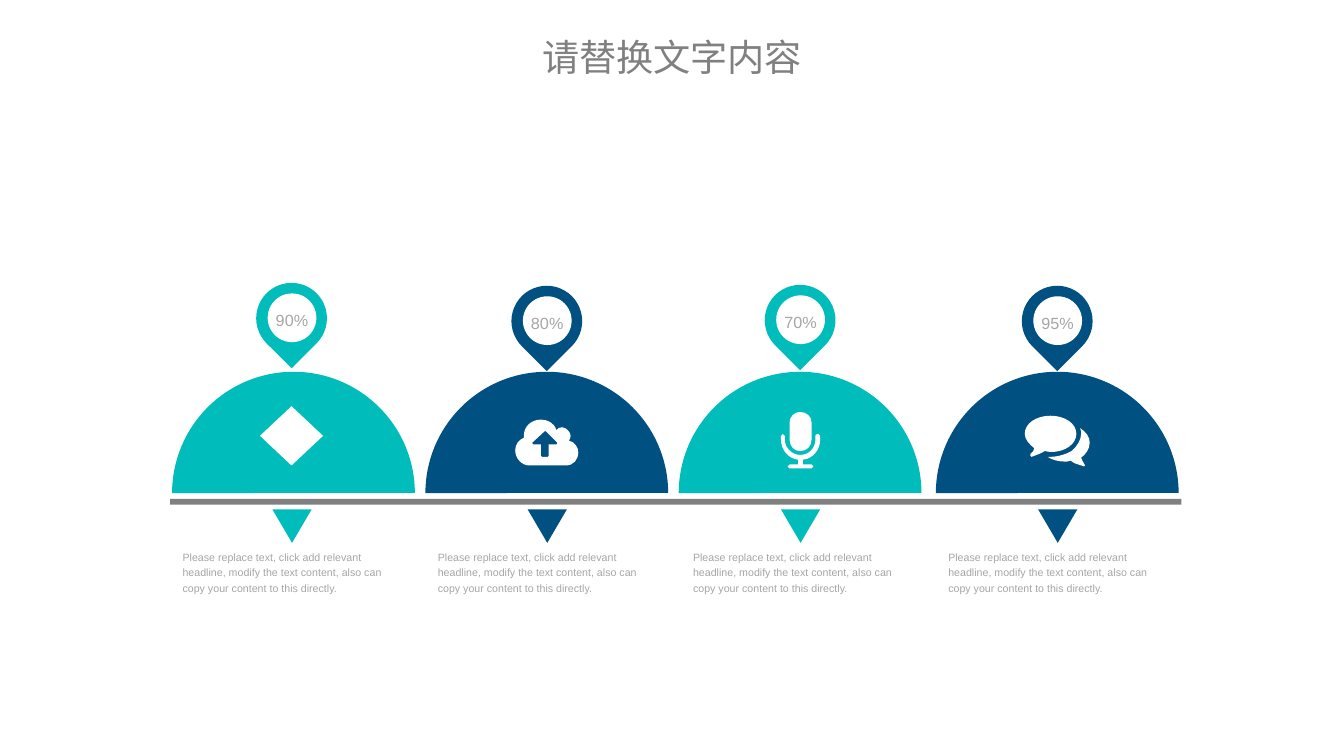
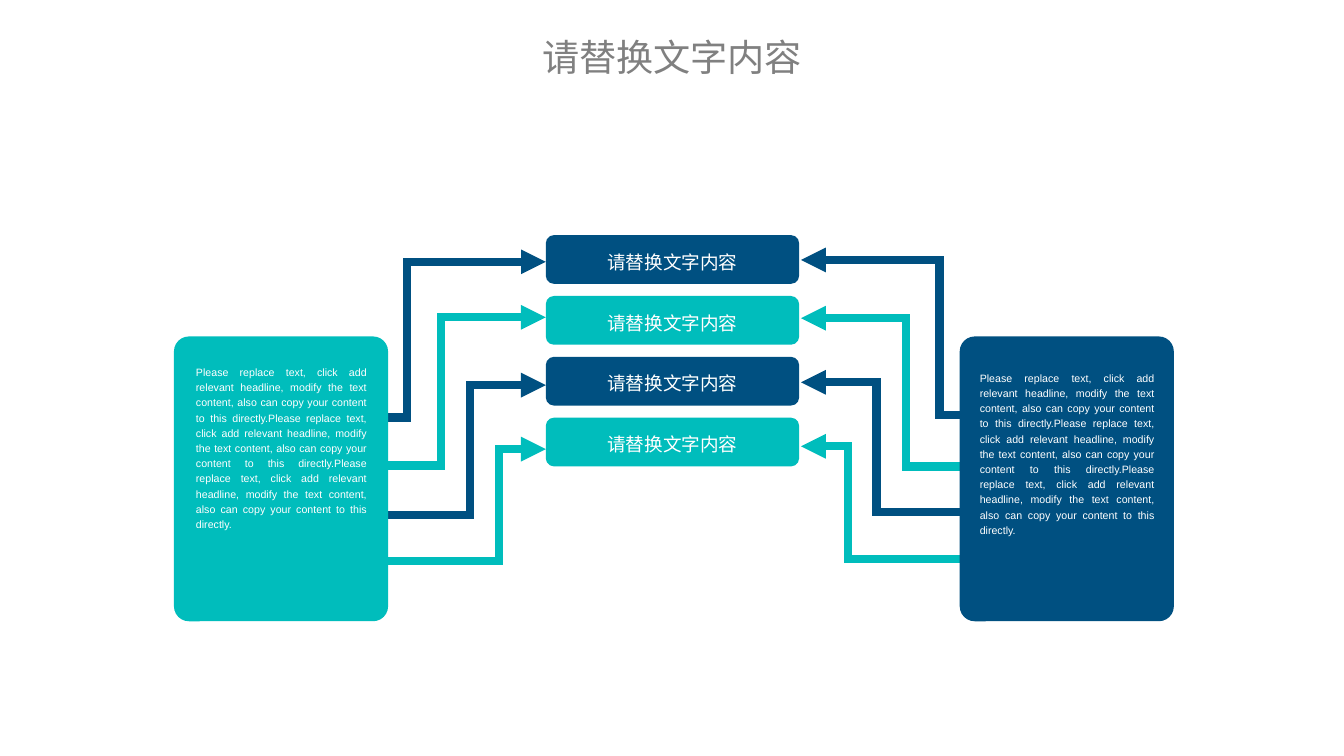
from lxml.etree import SubElement
from pptx import Presentation
from pptx.dml.color import RGBColor
from pptx.enum.shapes import MSO_CONNECTOR, MSO_SHAPE as SHAPE
from pptx.enum.text import MSO_ANCHOR as ANCHOR, PP_ALIGN as ALIGN
from pptx.oxml.ns import qn
from pptx.util import Inches, Pt

COLORS = {"teal": "00BDBC", "navy": "005081", "gray": "808080",
          "light": "A6A6A6", "white": "FFFFFF"}
FONT = "Arial"
HEADING = "请替换文字内容"
BODY = ("Please replace text, click add relevant headline, modify the text "
        "content, also can copy your content to this directly.")

CLOUD = """
M 5.92 4.87 L 5.54 4.87 C 5.46 4.87 5.39 4.8 5.39 4.71
C 5.39 4.65 5.43 4.6 5.48 4.58 L 5.48 4.56 C 5.48 4.46 5.56 4.39 5.66 4.39
C 5.72 4.39 5.8 4.42 5.82 4.5 C 5.83 4.48 5.86 4.47 5.88 4.47
C 5.92 4.47 5.97 4.52 5.97 4.56 C 5.97 4.58 5.96 4.6 5.95 4.61
C 6.01 4.62 6.05 4.68 6.05 4.73 C 6.05 4.81 6 4.87 5.92 4.87
M 5.83 4.63 L 5.71 4.51 L 5.7 4.51 L 5.57 4.63 C 5.57 4.64 5.57 4.65 5.58 4.65
L 5.66 4.65 L 5.66 4.77 C 5.66 4.78 5.66 4.78 5.67 4.78 L 5.73 4.78
C 5.74 4.78 5.74 4.78 5.74 4.77 L 5.74 4.65 L 5.82 4.65
C 5.83 4.65 5.83 4.64 5.83 4.63
"""
MICROPHONE = """
M 8.58 4.6 C 8.58 4.71 8.5 4.8 8.4 4.81 L 8.4 4.86 L 8.49 4.86
C 8.5 4.86 8.51 4.87 8.51 4.88 C 8.51 4.89 8.5 4.9 8.49 4.9 L 8.26 4.9
C 8.25 4.9 8.24 4.89 8.24 4.88 C 8.24 4.87 8.25 4.86 8.26 4.86
L 8.35 4.86 L 8.35 4.81 C 8.25 4.8 8.17 4.71 8.17 4.6 L 8.17 4.56
C 8.17 4.55 8.18 4.54 8.19 4.54 C 8.2 4.54 8.21 4.55 8.21 4.56 L 8.21 4.6
C 8.21 4.69 8.29 4.76 8.37 4.76 C 8.46 4.76 8.53 4.69 8.53 4.6 L 8.53 4.56
C 8.53 4.55 8.54 4.54 8.56 4.54 C 8.57 4.54 8.58 4.55 8.58 4.56
M 8.49 4.6 C 8.49 4.67 8.44 4.72 8.37 4.72 C 8.31 4.72 8.26 4.67 8.26 4.6
L 8.26 4.42 C 8.26 4.36 8.31 4.31 8.37 4.31 C 8.44 4.31 8.49 4.36 8.49 4.42
"""
CHAT = """
M 10.99 4.73 C 10.97 4.73 10.95 4.72 10.93 4.72 C 10.89 4.74 10.86 4.76 10.82 4.77
C 10.81 4.77 10.8 4.78 10.79 4.78 C 10.78 4.78 10.78 4.77 10.78 4.77
C 10.77 4.76 10.78 4.75 10.78 4.75 C 10.8 4.73 10.82 4.72 10.82 4.69
C 10.77 4.65 10.72 4.6 10.72 4.54 C 10.72 4.43 10.84 4.35 10.99 4.35
C 11.14 4.35 11.26 4.43 11.26 4.54 C 11.26 4.65 11.14 4.73 10.99 4.73
M 11.31 4.79 C 11.32 4.82 11.33 4.83 11.34 4.85 C 11.35 4.86 11.35 4.86 11.35 4.87
C 11.35 4.88 11.35 4.88 11.34 4.88 C 11.33 4.88 11.32 4.88 11.31 4.87
C 11.27 4.86 11.24 4.85 11.2 4.82 C 11.18 4.83 11.16 4.83 11.14 4.83
C 11.07 4.83 11 4.81 10.96 4.78 L 10.99 4.78 C 11.07 4.78 11.16 4.75 11.21 4.72
C 11.27 4.67 11.31 4.6 11.31 4.54 C 11.31 4.52 11.31 4.5 11.3 4.48
C 11.36 4.52 11.4 4.57 11.4 4.63 C 11.4 4.7 11.36 4.75 11.31 4.79
"""

COLUMNS = [
    ("90%", "teal", 3.05, 1.80, 2.96, None),
    ("80%", "navy", 5.72, 4.45, 2.99, CLOUD),
    ("70%", "teal", 8.37, 7.10, 2.98, MICROPHONE),
    ("95%", "navy", 11.06, 9.79, 2.99, CHAT),
]
BARS = ["navy", "teal", "navy", "teal"]
PANELS = [
    ("teal", (1.82, 3.52, 2.24, 2.98), (2.05, 3.8, 1.79, 1.76)),
    ("navy", (10.04, 3.52, 2.24, 2.98), (10.25, 3.86, 1.83, 1.78)),
]
ARROW_XS = [(3.09, 4.26), (3.17, 4.61), (3.16, 4.92), (3.16, 5.22)]
ARROW_YS = {
    "left": [(4.37, 2.74), (4.87, 3.32), (5.39, 4.03), (5.87, 4.70)],
    "right": [(4.34, 2.72), (4.88, 3.33), (5.36, 4.00), (5.85, 4.67)],
}
ARROW_END = 5.71
MIRROR = 14.09


def rgb(name):
    return RGBColor.from_string(COLORS[name])


def paint(sp, color):
    sp.shadow.inherit = False
    sp.fill.solid()
    sp.fill.fore_color.rgb = rgb(color)
    sp.line.fill.background()
    return sp


def write(sp, text, size, color, align=ALIGN.LEFT, spacing=1.2, before=0,
          anchor=ANCHOR.TOP, inset=True):
    tf = sp.text_frame
    tf.word_wrap = True
    tf.vertical_anchor = anchor
    if not inset:
        tf.margin_left = tf.margin_right = tf.margin_top = tf.margin_bottom = 0
    tf.text = text
    p = tf.paragraphs[0]
    p.alignment = align
    p.line_spacing = spacing
    if before:
        p.space_before = Pt(before)
    font = p.runs[0].font
    font.name = FONT
    font.size = Pt(size)
    font.color.rgb = rgb(color)


def add_shape(s, kind, box, color, rotation=0, adj=()):
    sp = paint(s.shapes.add_shape(kind, *map(Inches, box)), color)
    sp.rotation = rotation
    for i, value in enumerate(adj):
        sp.adjustments[i] = value
    return sp


def add_text(s, box, *args, **options):
    write(s.shapes.add_textbox(*map(Inches, box)), *args, inset=False, **options)


def read_outline(outline):
    tokens = iter(outline.split())
    for command in tokens:
        count = 3 if command == "C" else 1
        yield command, [(Inches(float(next(tokens))), Inches(float(next(tokens))))
                        for _ in range(count)]


def add_icon(s, outline):
    contours = []
    controls = []
    for command, points in read_outline(outline):
        if command == "M":
            contours.append([])
        else:
            controls.append(points[:-1])
        contours[-1].append(points[-1])
    builder = s.shapes.build_freeform(*contours[0][0])
    for i, (start, *ends) in enumerate(contours):
        if i:
            builder.move_to(*start)
        builder.add_line_segments(ends, close=True)
    sp = paint(builder.convert_to_shape(), "white")
    segments = list(sp.element.iter(qn("a:lnTo")))
    for segment, handles in zip(segments, controls):
        if handles:
            segment.tag = qn("a:cubicBezTo")
            end = segment[0]
            for x, y in handles:
                SubElement(segment, qn("a:pt"), x=str(x - sp.left), y=str(y - sp.top))
            segment.append(end)


def add_arrow(s, start, end, bend_x, color):
    cxn = s.shapes.add_connector(MSO_CONNECTOR.ELBOW, *map(Inches, start + end))
    cxn.line.width = Pt(6.25)
    cxn.line.color.rgb = rgb(color)
    spPr = cxn.element.spPr
    guides = spPr.find(qn("a:prstGeom")).find(qn("a:avLst"))
    bend = (bend_x - start[0]) / (end[0] - start[0])
    SubElement(guides, qn("a:gd"), name="adj1", fmla=f"val {round(bend * 100000)}")
    ln = spPr.find(qn("a:ln"))
    SubElement(ln, qn("a:miter"), lim="800000")
    SubElement(ln, qn("a:tailEnd"), type="triangle")
    SubElement(spPr, qn("a:effectLst"))


def new_slide(prs):
    s = prs.slides.add_slide(prs.slide_layouts[6])
    add_text(s, (5.47, 0.22, 3.12, 0.55), HEADING, 28, "gray",
             align=ALIGN.CENTER, spacing=1.3)
    return s


def build_domes(prs):
    s = new_slide(prs)
    add_shape(s, SHAPE.RECTANGLE, (1.78, 5.22, 10.58, 0.06), "gray")
    for i, (percent, color, center, dome_x, pin_y, icon) in enumerate(COLUMNS):
        add_shape(s, SHAPE.CHORD, (dome_x, 3.89, 2.54, 2.54), color, 112.4,
                  (40.583, 148.461))
        add_shape(s, SHAPE.ISOSCELES_TRIANGLE, (center - 0.2, 5.33, 0.41, 0.35),
                  color, 180)
        pin = s.shapes.add_group_shape()
        add_shape(pin, SHAPE.TEAR, (center - 0.37, pin_y, 0.74, 0.74), color, 135)
        disc = add_shape(pin, SHAPE.OVAL, (center - 0.25, pin_y + 0.11, 0.51, 0.51),
                         "white")
        write(disc, percent, 12.2, "light", align=ALIGN.CENTER,
              anchor=ANCHOR.MIDDLE, inset=False)
        if icon:
            add_icon(s, icon)
        else:
            add_shape(s, SHAPE.DIAMOND, (center - 0.33, 4.25, 0.66, 0.62), "white")
        add_text(s, (1.91 + 2.67 * i, 5.74, 2.29, 0.47), BODY, 8, "light", before=1.6)


def build_flow(prs):
    s = new_slide(prs)
    for side, ys in ARROW_YS.items():
        for (start_x, bend_x), (start_y, end_y), color in zip(ARROW_XS, ys, BARS):
            xs = (start_x, bend_x, ARROW_END)
            if side == "right":
                xs = [MIRROR - x for x in xs]
            add_arrow(s, (xs[0], start_y), (xs[2], end_y), xs[1], color)
    pitch = (4.37 - 2.46) / (len(BARS) - 1)
    for i, color in enumerate(BARS):
        bar = add_shape(s, SHAPE.ROUNDED_RECTANGLE,
                        (5.71, 2.46 + i * pitch, 2.65, 0.51), color)
        write(bar, HEADING, 14, "white", align=ALIGN.CENTER, anchor=ANCHOR.MIDDLE)
    for color, box, text_box in PANELS:
        panel = s.shapes.add_group_shape()
        add_shape(panel, SHAPE.ROUNDED_RECTANGLE, box, color, adj=(0.07,))
        add_text(panel, text_box, BODY * 3, 8, "white", align=ALIGN.JUSTIFY, before=1.6)


def main():
    prs = Presentation()
    prs.slide_width = Inches(14.06)
    prs.slide_height = Inches(7.91)
    build_domes(prs)
    build_flow(prs)
    prs.save("out.pptx")


if __name__ == "__main__":
    main()
